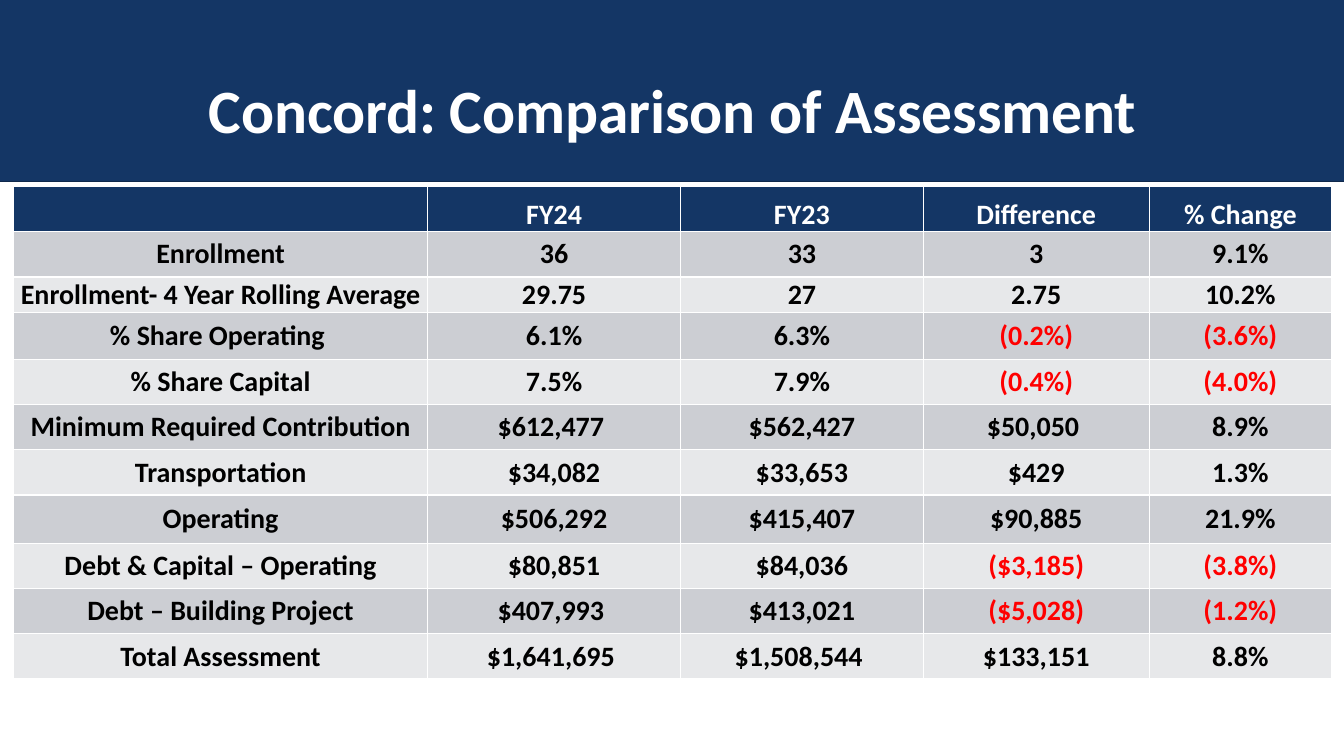
import pptx
import pptx.util
import pptx.dml.color
import pptx.enum.shapes
import pptx.enum.text

Cm = pptx.util.Cm
Pt = pptx.util.Pt
RGBColor = pptx.dml.color.RGBColor
MIDDLE = pptx.enum.text.MSO_ANCHOR.MIDDLE
BOTTOM = pptx.enum.text.MSO_ANCHOR.BOTTOM

NAVY = RGBColor(0x14, 0x36, 0x65)
DARK_NAVY = RGBColor(0x0F, 0x28, 0x4B)
GREY = RGBColor(0xCC, 0xCE, 0xD3)
PALE_GREY = RGBColor(0xE7, 0xE8, 0xEA)
WHITE = RGBColor(0xFF, 0xFF, 0xFF)
BLACK = RGBColor(0, 0, 0)
RED = RGBColor(0xFF, 0, 0)

COLUMN_WIDTHS = [10.44, 6.37, 6.12, 5.69, 4.6]
ROW_HEIGHT = 1.14
SPECIAL_HEIGHTS = {2: 0.89, 3: 1.19, 7: 1.22}
ROWS = [
    ["", " FY24 ", " FY23 ", " Difference ", "% Change"],
    ["Enrollment", "36", "33", "3", "9.1%"],
    ["Enrollment- 4 Year Rolling Average", "29.75", "27", "2.75", "10.2%"],
    ["% Share Operating ", "6.1%", "6.3%", "(0.2%)", "(3.6%)"],
    [" % Share Capital ", "7.5%", "7.9%", "(0.4%)", "(4.0%)"],
    ["Minimum Required Contribution", "$612,477 ", "$562,427", "$50,050 ", "8.9%"],
    ["Transportation", "$34,082", "$33,653", "$429", "1.3%"],
    ["Operating", "$506,292", "$415,407", "$90,885", "21.9%"],
    ["Debt & Capital – Operating", "$80,851", "$84,036", "($3,185)", "(3.8%)"],
    ["Debt – Building Project", "$407,993 ", "$413,021", "($5,028)", "(1.2%)"],
    ["Total Assessment", "$1,641,695 ", "$1,508,544 ", "$133,151", "8.8%"],
]


def write_text(frame, text, size, color, anchor=MIDDLE):
    frame.vertical_anchor = anchor
    para = frame.paragraphs[0]
    para.alignment = pptx.enum.text.PP_ALIGN.CENTER
    span = para.add_run()
    span.text = text
    span.font.name = "Calibri"
    span.font.size = Pt(size)
    span.font.bold = True
    span.font.color.rgb = color
    return para


deck = pptx.Presentation()
deck.slide_width = Cm(33.87)
deck.slide_height = Cm(19.05)
page = deck.slides.add_slide(deck.slide_layouts[5])

band = page.shapes.add_shape(
    pptx.enum.shapes.MSO_SHAPE.RECTANGLE, Cm(-0.36), Cm(-0.3), Cm(34.52), Cm(4.88))
band.shadow.inherit = False
band.fill.solid()
band.fill.fore_color.rgb = NAVY
band.line.color.rgb = DARK_NAVY
band.line.width = Pt(1)

title = page.shapes.title
band.element.addnext(title.element)
title.left, title.top, title.width, title.height = Cm(2.34), Cm(1.02), Cm(29.21), Cm(3.68)
heading = write_text(title.text_frame, "Concord: Comparison of Assessment", 44, WHITE)
heading.line_spacing = 0.9
heading.runs[0].font._element.set("spc", "-10")

frame = page.shapes.add_table(
    len(ROWS), len(COLUMN_WIDTHS), Cm(0.34), Cm(4.7), Cm(33.22), Cm(12.45))
table = frame.table
for column, width in zip(table.columns, COLUMN_WIDTHS):
    column.width = Cm(width)

for row_index, row in enumerate(ROWS):
    table.rows[row_index].height = Cm(SPECIAL_HEIGHTS.get(row_index, ROW_HEIGHT))
    is_header = row_index == 0
    fill = NAVY if is_header else (PALE_GREY, GREY)[row_index % 2]
    for column_index, text in enumerate(row):
        cell = table.cell(row_index, column_index)
        cell.fill.solid()
        cell.fill.fore_color.rgb = fill
        cell.margin_left = cell.margin_right = cell.margin_top = cell.margin_bottom = 0
        if text:
            color = WHITE if is_header else RED if text.startswith("(") else BLACK
            cell.vertical_anchor = BOTTOM if is_header else MIDDLE
            write_text(cell.text_frame, text, 20, color, cell.vertical_anchor)

deck.save("out.pptx")
